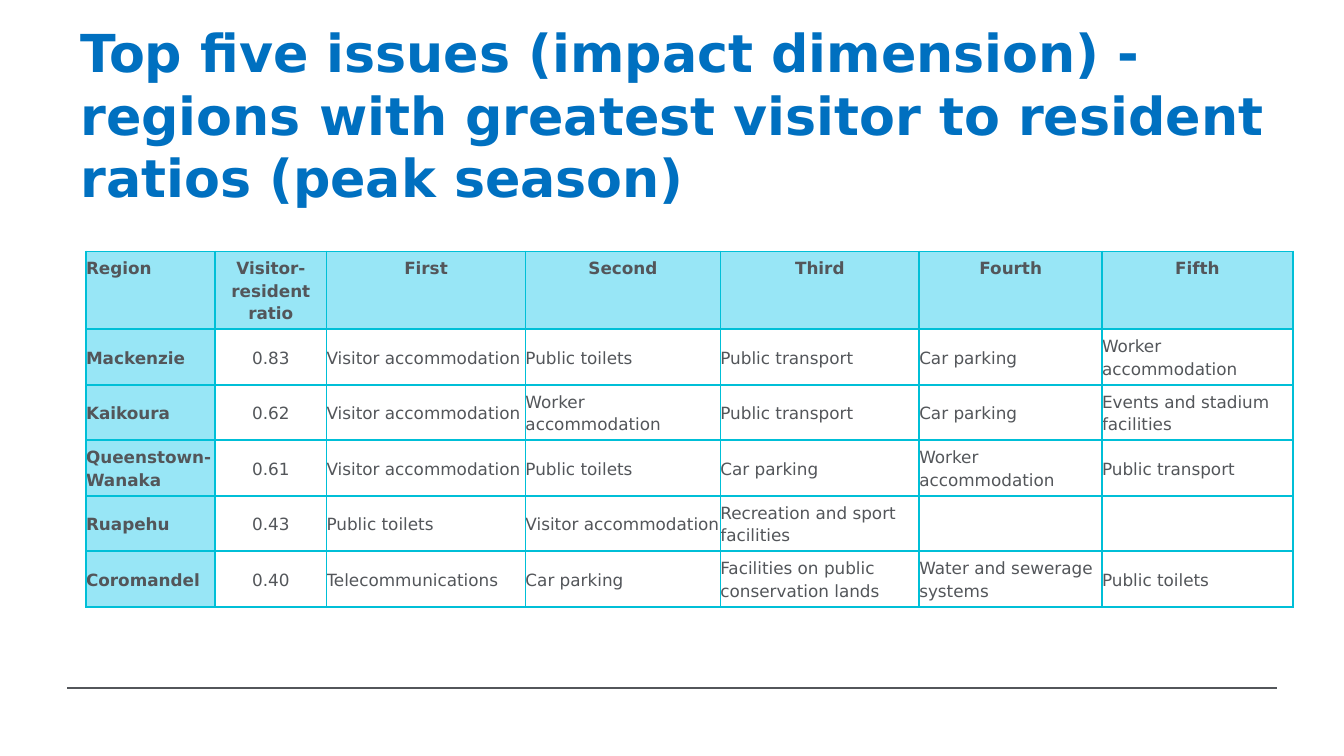
from lxml import etree
from pptx import Presentation
from pptx.dml.color import RGBColor
from pptx.enum.shapes import MSO_CONNECTOR
from pptx.enum.text import MSO_ANCHOR, PP_ALIGN
from pptx.oxml.ns import qn
from pptx.util import Inches, Pt

FONT = "DejaVu Sans"
COLORS = {"title": "0070C0", "text": "53565A", "border": "00BFD7",
          "header": "98E6F6", "body": "FFFFFF"}

TITLE = ("Top five issues (impact dimension) - regions with greatest "
         "visitor to resident ratios (peak season)")
ROWS = [
    ("Region", "Visitor-resident ratio", "First", "Second", "Third", "Fourth", "Fifth"),
    ("Mackenzie", "0.83", "Visitor accommodation", "Public toilets",
     "Public transport", "Car parking", "Worker accommodation"),
    ("Kaikoura", "0.62", "Visitor accommodation", "Worker accommodation",
     "Public transport", "Car parking", "Events and stadium facilities"),
    ("Queenstown-Wanaka", "0.61", "Visitor accommodation", "Public toilets",
     "Car parking", "Worker accommodation", "Public transport"),
    ("Ruapehu", "0.43", "Public toilets", "Visitor accommodation",
     "Recreation and sport facilities", "", ""),
    ("Coromandel", "0.40", "Telecommunications", "Car parking",
     "Facilities on public conservation lands", "Water and sewerage systems",
     "Public toilets"),
]
COL_WIDTHS = [0.96, 0.83, 1.48, 1.45, 1.48, 1.36, 1.42]
ROW_HEIGHTS = [0.41, 0.24, 0.24, 0.41, 0.24, 0.41]  # minimums; rows grow with their text
TABLE_HEIGHT = 2.64


def rgb(name):
    return RGBColor.from_string(COLORS[name])


def set_font(p, size, color, bold):
    p.font.name = FONT
    p.font.size = Pt(size)
    p.font.bold = bold
    p.font.color.rgb = rgb(color)


def add_borders(cell):
    tcPr = cell._tc.get_or_add_tcPr()
    for side in ("a:lnL", "a:lnR", "a:lnT", "a:lnB"):
        ln = etree.SubElement(tcPr, qn(side), w=str(Pt(1)))
        fill = etree.SubElement(ln, qn("a:solidFill"))
        etree.SubElement(fill, qn("a:srgbClr"), val=COLORS["border"])


def add_footer_rule(s):
    rule = s.shapes.add_connector(MSO_CONNECTOR.STRAIGHT, Inches(0.5), Inches(5.12),
                                  Inches(9.5), Inches(5.12))
    rule.line.color.rgb = rgb("text")
    rule.line.width = Pt(0.75)
    etree.SubElement(rule._element.spPr, qn("a:effectLst"))


def add_title(s):
    sp = s.shapes.add_textbox(Inches(0.5), Inches(0.61), Inches(9.38), Inches(0.94))
    tf = sp.text_frame
    tf.word_wrap = True
    tf.vertical_anchor = MSO_ANCHOR.BOTTOM
    tf.margin_bottom = 0
    p = tf.paragraphs[0]
    p.text = TITLE
    set_font(p, 28, "title", True)


def fill_cell(cell, text, is_header, col):
    add_borders(cell)
    cell.fill.solid()
    cell.fill.fore_color.rgb = rgb("header" if is_header or col == 0 else "body")
    cell.margin_left = cell.margin_right = 0
    cell.margin_top = cell.margin_bottom = Inches(0.04)
    cell.vertical_anchor = MSO_ANCHOR.TOP if is_header else MSO_ANCHOR.MIDDLE
    p = cell.text_frame.paragraphs[0]
    if text:
        p.text = text
    p.line_spacing = Pt(12)
    centred = col == 1 or (is_header and col > 0)
    p.alignment = PP_ALIGN.CENTER if centred else PP_ALIGN.LEFT
    set_font(p, 9, "text", is_header or col == 0)


def add_issue_table(s):
    frame = s.shapes.add_table(len(ROWS), len(COL_WIDTHS), Inches(0.64), Inches(1.87),
                               Inches(sum(COL_WIDTHS)), Inches(TABLE_HEIGHT))
    table = frame.table
    table.first_row = table.horz_banding = False
    for column, width in zip(table.columns, COL_WIDTHS):
        column.width = Inches(width)
    for r, (values, height) in enumerate(zip(ROWS, ROW_HEIGHTS)):
        table.rows[r].height = Inches(height)
        for c, text in enumerate(values):
            fill_cell(table.cell(r, c), text, r == 0, c)
    frame.height = Inches(TABLE_HEIGHT)


prs = Presentation()
prs.slide_width = Inches(10)
prs.slide_height = prs.slide_width * 9 // 16
s = prs.slides.add_slide(prs.slide_layouts[6])
add_footer_rule(s)
add_title(s)
add_issue_table(s)
prs.save("out.pptx")
